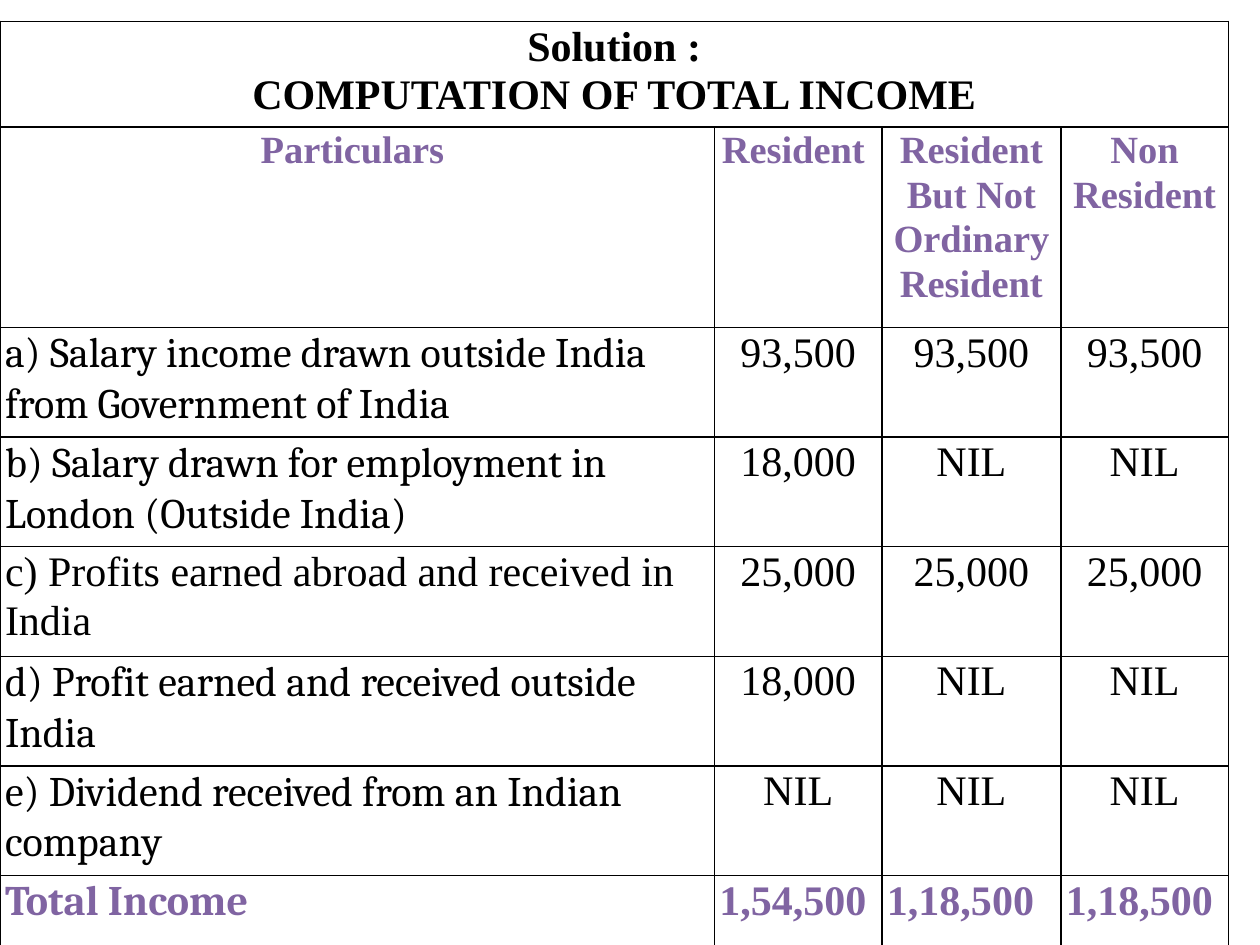
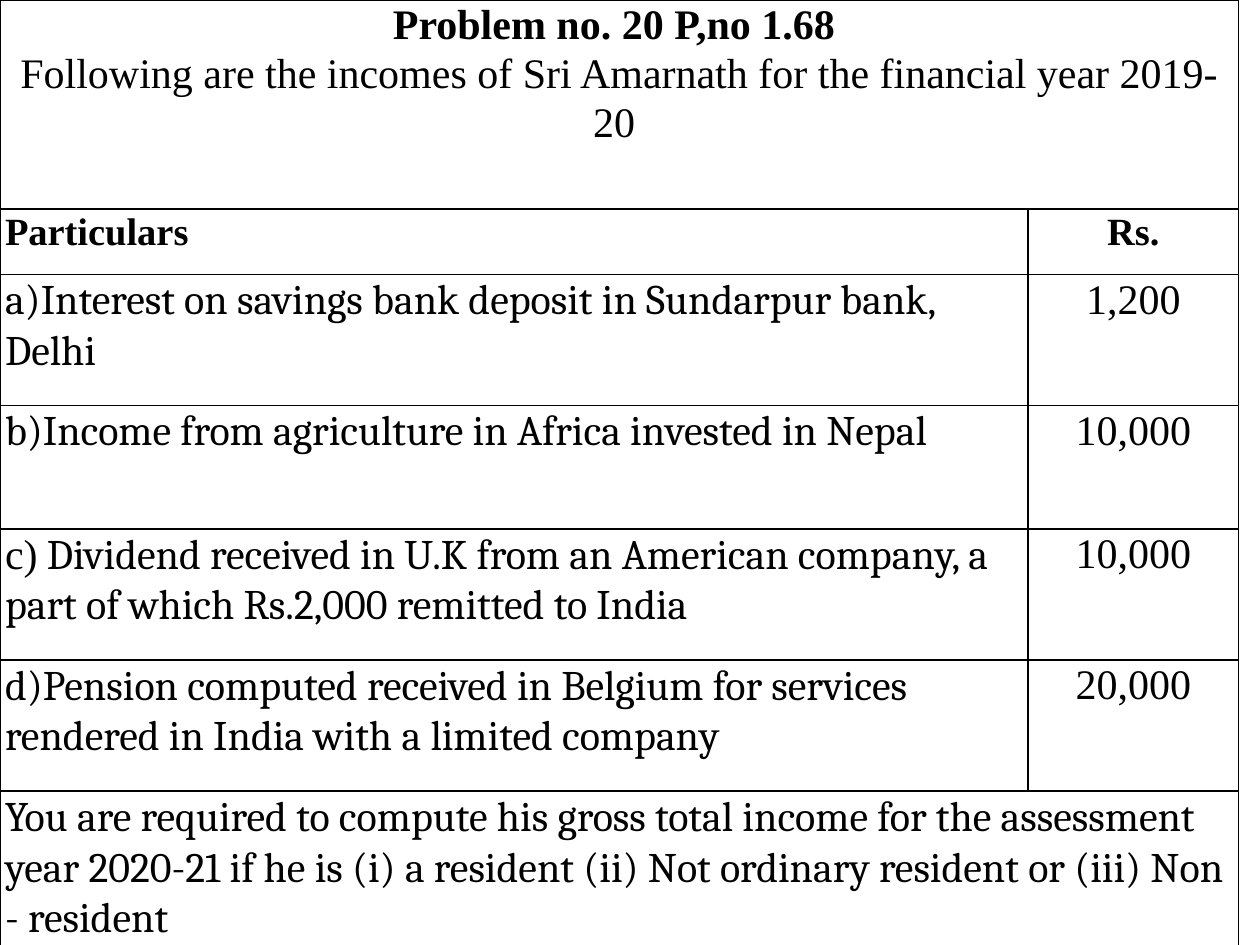
from lxml import etree
from pptx import Presentation
from pptx.dml.color import RGBColor
from pptx.enum.text import PP_ALIGN as Align
from pptx.oxml.ns import qn
from pptx.util import Inches, Pt

BLACK, PURPLE = "000000", "8064A2"
SERIF, BODY = "Times New Roman", "Cambria"

# Text formats shared by both tables
HEADING = {"size": Pt(24), "name": SERIF, "bold": True}
INTRO = {**HEADING, "bold": False}
COLUMN = {**HEADING, "size": Pt(22)}
ITEM = {"size": Pt(24), "name": BODY, "bold": False}
AMOUNT = {**ITEM, "name": SERIF}
TOTAL = {**ITEM, "bold": True}


def color(value):
    return RGBColor.from_string(value)


def centered(text, style, shade=BLACK):
    return Align.CENTER, [(text, style, shade)]


def left(text, style, shade=BLACK):
    return Align.LEFT, [(text, style, shade)]


class TableDeck:
    def __init__(self):
        self.deck = Presentation()
        self.deck.slide_width, self.deck.slide_height = Inches(10), Inches(7.5)
        self.page = None

    def add_page(self):
        self.page = self.deck.slides.add_slide(self.deck.slide_layouts[6])

    def add_grid(self, top, widths, heights, rows):
        """Each row lists its cells; a row with one cell spans the table."""
        frame = self.page.shapes.add_table(
            len(heights), len(widths), Inches(0), Inches(top),
            Inches(sum(widths)), Inches(sum(heights)))
        table = frame.table
        table.first_row = table.horz_banding = False
        for column, width in zip(table.columns, widths):
            column.width = Inches(width)
        for row, height in zip(table.rows, heights):
            row.height = Inches(height)
        for cell in table.iter_cells():
            self.frame_cell(cell)
        for index, cells in enumerate(rows):
            if len(cells) == 1:
                table.cell(index, 0).merge(table.cell(index, len(widths) - 1))
            for position, paragraphs in enumerate(cells):
                self.write_cell(table.cell(index, position), paragraphs)

    def frame_cell(self, cell):
        margins = {"margin_left": 0.04, "margin_right": 0.04,
                   "margin_top": 0, "margin_bottom": 0}
        for name, value in margins.items():
            setattr(cell, name, Inches(value))
        cell.fill.background()
        properties = cell._tc.get_or_add_tcPr()
        for index, side in enumerate(("lnL", "lnR", "lnT", "lnB")):
            line = etree.Element(qn(f"a:{side}"), w=str(Pt(1)))
            fill = etree.SubElement(line, qn("a:solidFill"))
            etree.SubElement(fill, qn("a:srgbClr"), val=BLACK)
            properties.insert(index, line)

    def write_cell(self, cell, paragraphs):
        box = cell.text_frame
        for index, (alignment, spans) in enumerate(paragraphs):
            para = box.add_paragraph() if index else box.paragraphs[0]
            para.alignment, para.line_spacing = alignment, 1.05
            for text, style, shade in spans:
                span = para.add_run()
                span.text = text
                for name, value in style.items():
                    setattr(span.font, name, value)
                span.font.color.rgb = color(shade)


def item_row(label, *amounts, style=ITEM):
    return [[left(label, style)]] + [[centered(text, AMOUNT)] for text in amounts]


def add_solution(deck):
    deck.add_page()
    headers = ["Particulars ", "Resident ", "Resident But Not Ordinary Resident",
               "Non Resident"]
    totals = ["1,54,500", "1,18,500", "1,18,500"]
    rows = [
        [[centered("Solution :", HEADING),
          centered("COMPUTATION OF TOTAL INCOME", HEADING)]],
        [[centered(text, COLUMN, PURPLE)] for text in headers],
        item_row("a) Salary income drawn outside India from Government of India",
                 "93,500", "93,500", "93,500"),
        item_row("b) Salary drawn for employment in London (Outside India)",
                 "18,000", "NIL", "NIL"),
        item_row("c) Profits earned abroad and received in India",
                 "25,000", "25,000", "25,000", style=AMOUNT),
        item_row("d) Profit earned and received outside India",
                 "18,000", "NIL", "NIL"),
        item_row("e) Dividend received from an Indian company",
                 "NIL", "NIL", "NIL"),
        [[left("Total Income", TOTAL, PURPLE)]]
        + [[left(text, HEADING, PURPLE)] for text in totals],
    ]
    deck.add_grid(0.17, [5.67, 1.33, 1.42, 1.33], [0.84, 1.59] + [0.87] * 6, rows)


def add_problem(deck):
    deck.add_page()
    dividend = (" Dividend received in U.K from an American company, "
                "a part of which Rs.2,000 remitted to India")
    rows = [
        [[centered("Problem no. 20 P,no 1.68 ", HEADING),
          centered("Following are the incomes of Sri Amarnath for the "
                   "financial year 2019- 20 ", INTRO)]],
        [[left("Particulars", COLUMN)], [centered("Rs.", COLUMN)]],
        item_row("a)Interest on savings bank deposit in Sundarpur bank, Delhi",
                 "1,200"),
        item_row("b)Income from agriculture in Africa invested in Nepal", "10,000"),
        [[(Align.LEFT, [("c)", AMOUNT, BLACK), (dividend, ITEM, BLACK)])],
         [centered("10,000", AMOUNT)]],
        item_row("d)Pension computed received in Belgium for services rendered "
                 "in India with a limited company", "20,000"),
        item_row("You are required to compute his gross total income for the "
                 "assessment year 2020-21 if he is (i) a resident (ii) Not "
                 "ordinary resident or (iii) Non - resident"),
    ]
    deck.add_grid(0, [8.16, 1.67], [1.66, 0.52, 1.04, 0.98, 1.04, 1.04, 1.56], rows)


def main():
    tables = TableDeck()
    add_solution(tables)
    add_problem(tables)
    tables.deck.save("out.pptx")


if __name__ == "__main__":
    main()
